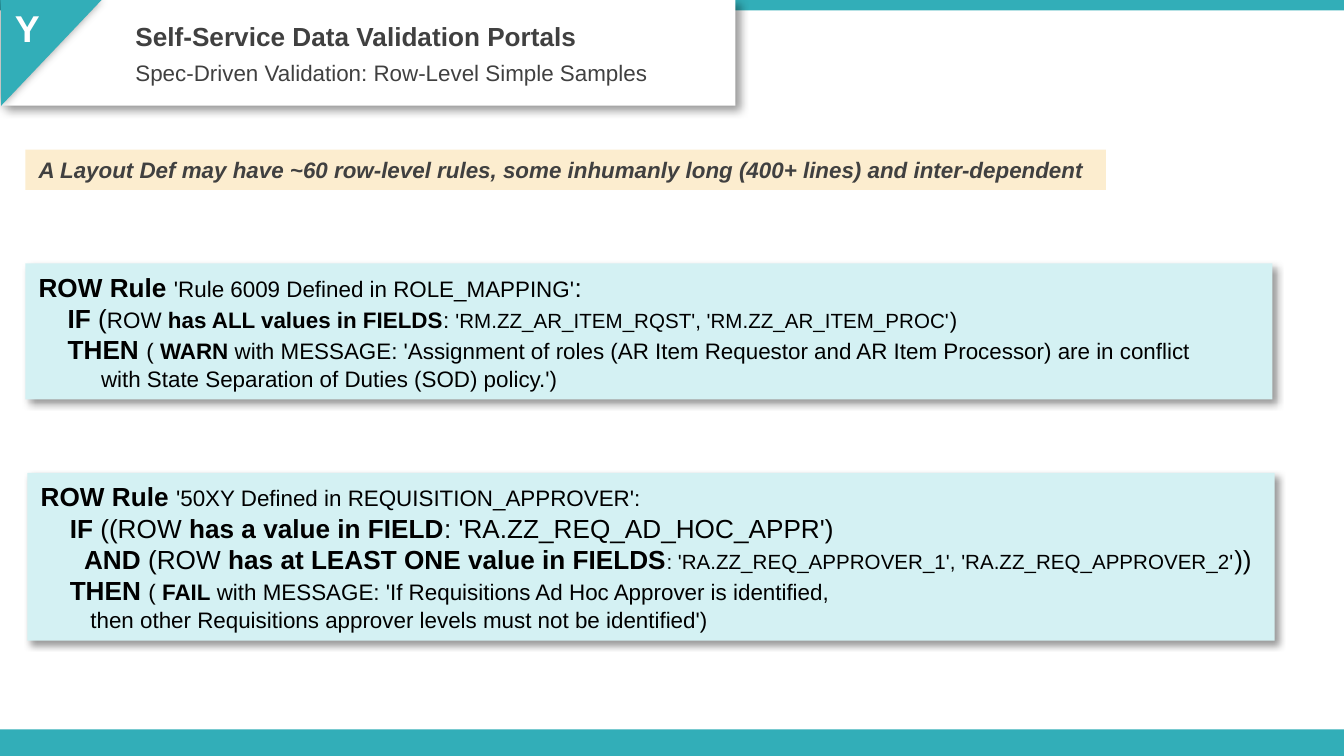
import lxml.etree
import pptx
import pptx.dml.color
import pptx.enum.shapes
import pptx.enum.text
import pptx.oxml.ns
import pptx.util

Cm = pptx.util.Cm
Pt = pptx.util.Pt
SHAPES = pptx.enum.shapes.MSO_SHAPE
ANCHOR = pptx.enum.text.MSO_ANCHOR

WIDTH, HEIGHT = 25.4, 14.29
TEAL, AQUA, CREAM = "32AEB8", "D4F1F3", "FCEDCF"
WHITE, BLACK, GREY = "FFFFFF", "000000", "404040"
STEP, DEEP_STEP = 0.55, 0.82

bands = [(13.79, HEIGHT - 13.79), (0, 0.2)]

header_labels = [
    ((0.03, -0.03, 1.65, 1.12), ("Y", 20, "b"), WHITE),
    ((2.31, 0.26, 9.55, 0.86), ("Self-Service Data Validation Portals", 14, "b"), GREY),
    ((2.31, 1, 11.58, 0.76), ("Spec-Driven Validation: Row-Level Simple Samples", 12, ""), GREY),
]

callout = ("A Layout Def may have ~60 row-level rules, some inhumanly long "
           "(400+ lines) and inter-dependent", 12, "bi")

rules = [
    ((0.48, 4.98, 23.57, 2.57), [
        (0, [("ROW Rule ", 14, "b"), ("'Rule 6009 Defined in ROLE_MAPPING'", 12, ""),
             (":", 14, "")]),
        (STEP, [("IF", 14, "b"), (" (", 14, ""), ("ROW ", 12, ""),
                ("has ALL values in FIELDS", 12, "b"), (": ", 12, ""),
                ("'RM.ZZ_AR_ITEM_RQST', 'RM.ZZ_AR_ITEM_PROC'", 11, ""), (")", 12, "")]),
        (STEP, [("THEN ", 14, "b"), ("( ", 12, ""), ("WARN ", 12, "b"),
                ("with MESSAGE: 'Assignment of roles (AR Item Requestor and "
                 "AR Item Processor) are in conflict", 12, "")]),
        (1.18, [("with State Separation of Duties (SOD) policy.')", 12, "")]),
    ]),
    ((0.52, 8.94, 23.57, 3.17), [
        (0, [("ROW Rule ", 14, "b"), ("'50XY Defined in REQUISITION_APPROVER':", 12, "")]),
        (STEP, [("IF", 14, "b"), (" ((ROW ", 14, ""), ("has a value in FIELD", 14, "b"),
                (": 'RA.ZZ_REQ_AD_HOC_APPR')", 14, "")]),
        (DEEP_STEP, [("AND", 14, "b"), (" (ROW ", 14, ""),
                     ("has at LEAST ONE value in FIELDS", 14, "b"),
                     (": 'RA.ZZ_REQ_APPROVER_1', 'RA.ZZ_REQ_APPROVER_2'", 11, ""),
                     ("))", 14, "")]),
        (STEP, [("THEN ", 14, "b"), ("( ", 12, ""), ("FAIL", 12, "b"),
                (" with MESSAGE: 'If Requisitions Ad Hoc Approver is identified,", 12, "")]),
        (0.94, [("then other Requisitions approver levels must not be identified')", 12, "")]),
    ]),
]


def color(code):
    return pptx.dml.color.RGBColor.from_string(code)


def add_shadow(shape, blur, distance, angle):
    effects = shape._element.spPr.find(pptx.oxml.ns.qn("a:effectLst"))
    outer = lxml.etree.SubElement(
        effects, pptx.oxml.ns.qn("a:outerShdw"), blurRad=str(Pt(blur)),
        dist=str(Pt(distance)), dir=str(angle * 60000), algn="tl", rotWithShape="0")
    black = lxml.etree.SubElement(outer, pptx.oxml.ns.qn("a:srgbClr"), val=BLACK)
    lxml.etree.SubElement(black, pptx.oxml.ns.qn("a:alpha"), val="40000")


def add_block(box, fill, shadow=None, preset=SHAPES.RECTANGLE):
    block = slide.shapes.add_shape(preset, *map(Cm, box))
    block.shadow.inherit = False
    block.fill.solid()
    block.fill.fore_color.rgb = color(fill)
    block.line.fill.background()
    if shadow:
        add_shadow(block, *shadow)
    return block


def write(shape, lines, ink, anchor):
    frame = shape.text_frame
    frame.word_wrap = True
    frame.vertical_anchor = anchor
    for number, (indent, pieces) in enumerate(lines):
        paragraph = frame.add_paragraph() if number else frame.paragraphs[0]
        paragraph.alignment = pptx.enum.text.PP_ALIGN.LEFT
        properties = paragraph._p.get_or_add_pPr()
        properties.set("marL", str(Cm(indent)))
        properties.set("indent", "0")
        for words, size, style in pieces:
            run = paragraph.add_run()
            run.text = words
            run.font.name = "Arial"
            run.font.size = Pt(size)
            run.font.bold = "b" in style
            run.font.italic = "i" in style
            run.font.color.rgb = color(ink)


deck = pptx.Presentation()
deck.slide_width, deck.slide_height = Cm(WIDTH), Cm(HEIGHT)
slide = deck.slides.add_slide(deck.slide_layouts[6])

for top, height in bands:
    add_block((0, top, WIDTH, height), TEAL)

add_block((0.03, 0, 13.87, 2), WHITE, (5, 3, 45))
corner = add_block((-0.03, 0.05, 2, 1.9), TEAL, (5, 0, 0), SHAPES.RIGHT_TRIANGLE)
corner.rotation = 90

for box, label, ink in header_labels:
    write(slide.shapes.add_textbox(*map(Cm, box)), [(0, [label])], ink, ANCHOR.TOP)

for box, lines in rules:
    write(add_block(box, AQUA, (4, 3, 45)), lines, BLACK, ANCHOR.MIDDLE)

write(add_block((0.48, 2.83, 20.42, 0.76), CREAM), [(0, [callout])], GREY, ANCHOR.MIDDLE)

deck.save("out.pptx")
